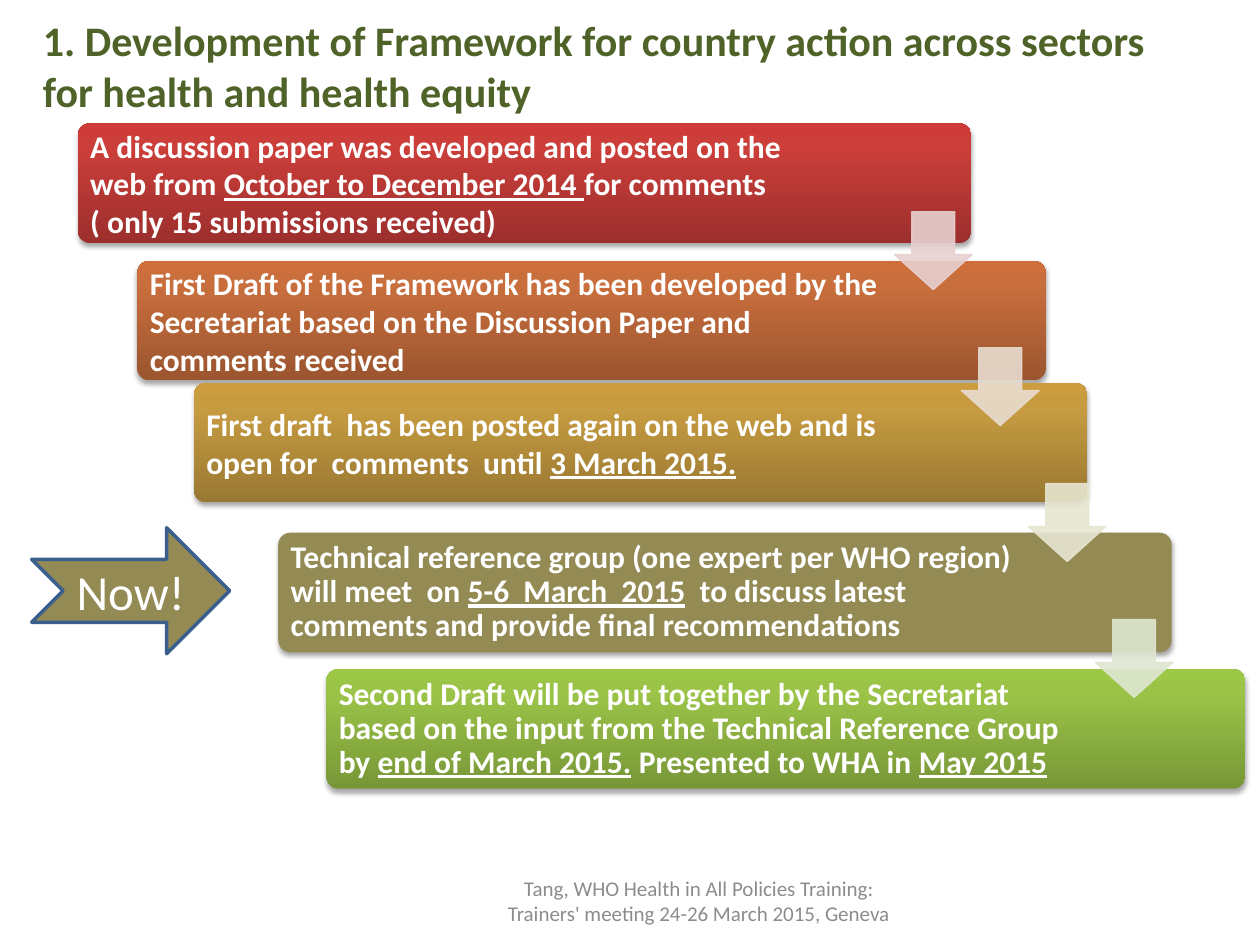
from copy import deepcopy

from lxml.etree import SubElement
from pptx import Presentation
from pptx.dml.color import RGBColor
from pptx.enum.shapes import MSO_SHAPE
from pptx.enum.text import MSO_ANCHOR, MSO_AUTO_SIZE, PP_ALIGN
from pptx.oxml.ns import qn
from pptx.util import Cm, Pt

FONT = "Calibri"
WHITE = RGBColor(0xFF, 0xFF, 0xFF)
GREEN = RGBColor(0x4F, 0x62, 0x28)
GREY = RGBColor(0x8C, 0x8C, 0x8C)
OLIVE = RGBColor(0x94, 0x8A, 0x54)
BLUE = RGBColor(0x3A, 0x5F, 0x8C)
REDS = [RGBColor(0x9C, 0x2F, 0x2D), RGBColor(0xCB, 0x3E, 0x3A), RGBColor(0xCE, 0x3B, 0x37)]
ORANGES = [RGBColor(0x9B, 0x55, 0x2F), RGBColor(0xC9, 0x6E, 0x3D), RGBColor(0xCD, 0x6E, 0x3B)]
GOLDS = [RGBColor(0x99, 0x78, 0x32), RGBColor(0xC7, 0x9C, 0x41), RGBColor(0xCB, 0x9D, 0x3F)]
LIMES = [RGBColor(0x77, 0x97, 0x37), RGBColor(0x9B, 0xC3, 0x48), RGBColor(0x9D, 0xC7, 0x46)]
ARROW_TINTS = [RGBColor(0xE8, 0xD0, 0xD0), RGBColor(0xE8, 0xDC, 0xD0),
               RGBColor(0xE7, 0xE6, 0xD1), RGBColor(0xDE, 0xE7, 0xD1)]
STOPS = [0, 0.8, 1]
STEP_HEIGHT = 2.41

# left, top, width, colours, line spacing, paragraphs (every second piece is underlined)
STEPS = [
    (1.57, 2.49, 18.01, REDS, 1, [
        ["A discussion paper was developed and posted on the web from ",
         "October to December 2014 ", "for comments"],
        ["( only 15 submissions received)"]]),
    (2.77, 5.26, 18.31, ORANGES, 1, [
        ["First Draft of the Framework has been developed by the Secretariat "
         "based on the Discussion Paper and comments received"]]),
    (3.91, 7.72, 18.01, GOLDS, 1, [
        ["First draft  has been posted again on the web and is open for  comments  until ",
         "3 March 2015."]]),
    (5.61, 10.74, 18.01, [OLIVE], 0.9, [
        ["Technical reference group (one expert per WHO region) will meet  on ",
         "5-6  March  2015",
         "  to discuss latest comments and provide final recommendations"]]),
    (6.58, 13.49, 18.52, LIMES, 0.9, [
        ["Second Draft will be put together by the Secretariat based on the input "
         "from the Technical Reference Group by ",
         "end of March 2015.", " Presented to WHA in ", "May 2015"]]),
]


def format_span(span, size, color, bold=False):
    """Give a run its font, size, colour and weight."""
    span.font.name = FONT
    span.font.size = Pt(size)
    span.font.color.rgb = color
    span.font.bold = bold


def format_text(frame, size, color, align, bold=False):
    """Format every run of a text frame alike."""
    frame.vertical_anchor = MSO_ANCHOR.MIDDLE
    for para in frame.paragraphs:
        para.alignment = align
        for span in para.runs:
            format_span(span, size, color, bold)


def fill_step(shape, colors):
    """Fill a step with one colour or a vertical gradient, dark at the bottom."""
    if len(colors) == 1:
        shape.fill.solid()
        shape.fill.fore_color.rgb = colors[0]
        return
    shape.fill.gradient()
    shape.fill.gradient_angle = 90
    stop_list = shape.element.spPr.find(".//" + qn("a:gsLst"))
    stop_list.append(deepcopy(stop_list[-1]))
    for stop, position, color in zip(shape.fill.gradient_stops, STOPS, colors):
        stop.position = position
        stop.color.rgb = color


def add_soft_shadow(shape):
    """Put a soft shadow below a shape."""
    shape.shadow.inherit = False
    effects = shape.element.spPr.find(qn("a:effectLst"))
    shadow = SubElement(effects, qn("a:outerShdw"), blurRad=str(Pt(3.1)),
                        dist=str(Pt(1.8)), dir="5400000", rotWithShape="0")
    color = SubElement(shadow, qn("a:srgbClr"), val="000000")
    SubElement(color, qn("a:alpha"), val="35000")


def add_step(page, left, top, width, colors, spacing, paragraphs):
    """Add one rounded step of the staircase with its text."""
    box = page.shapes.add_shape(MSO_SHAPE.ROUNDED_RECTANGLE, Cm(left), Cm(top),
                                Cm(width), Cm(STEP_HEIGHT))
    box.adjustments[0] = 0.1
    fill_step(box, colors)
    box.line.fill.background()
    add_soft_shadow(box)
    frame = box.text_frame
    frame.word_wrap = True
    frame.margin_left = Cm(0.18)
    frame.margin_right = Cm(3.1)
    frame.margin_top = frame.margin_bottom = Cm(0)
    for number, pieces in enumerate(paragraphs):
        para = frame.add_paragraph() if number else frame.paragraphs[0]
        para.line_spacing = spacing
        for index, piece in enumerate(pieces):
            span = para.add_run()
            span.text = piece
            span.font.underline = index % 2 == 1
    format_text(frame, 18, WHITE, PP_ALIGN.LEFT, bold=True)


def add_down_arrow(page, index, color):
    """Add the translucent arrow that leads from one step to the next."""
    arrow = page.shapes.add_shape(MSO_SHAPE.DOWN_ARROW, Cm(18.03 + 1.35 * index),
                                  Cm(4.27 + 2.74 * index), Cm(1.57), Cm(1.57))
    arrow.adjustments[0] = 0.55
    arrow.adjustments[1] = 0.45
    arrow.shadow.inherit = False
    arrow.fill.solid()
    arrow.fill.fore_color.rgb = color
    arrow.line.color.rgb = color
    arrow.line.width = Pt(0.75)
    for tint in arrow.element.spPr.iter(qn("a:srgbClr")):
        SubElement(tint, qn("a:alpha"), val="90000")


def add_title(page):
    """Move and format the title placeholder."""
    title = page.shapes.title
    title.left, title.top, title.width, title.height = Cm(0.61), Cm(-0.28), Cm(22.86), Cm(3.18)
    title.text_frame.text = ("1. Development of Framework for country action across sectors "
                             "for health and health equity")
    title.text_frame.auto_size = MSO_AUTO_SIZE.NONE
    format_text(title.text_frame, 24, GREEN, PP_ALIGN.LEFT, bold=True)


def add_now_marker(page):
    """Add the notched arrow that marks the current step."""
    marker = page.shapes.add_shape(MSO_SHAPE.NOTCHED_RIGHT_ARROW, Cm(0.64), Cm(10.64),
                                   Cm(3.99), Cm(2.54))
    marker.shadow.inherit = False
    marker.fill.solid()
    marker.fill.fore_color.rgb = OLIVE
    marker.line.color.rgb = BLUE
    marker.line.width = Pt(2)
    marker.text_frame.text = "Now!"
    marker.text_frame.word_wrap = False
    format_text(marker.text_frame, 28, WHITE, PP_ALIGN.CENTER)


def add_credit(page):
    """Add the two centred lines at the foot of the page."""
    box = page.shapes.add_textbox(Cm(8.69), Cm(17.65), Cm(10.8), Cm(1.02))
    box.text_frame.text = ("Tang, WHO Health in All Policies Training:\n"
                           "Trainers' meeting 24-26 March 2015, Geneva")
    box.text_frame.word_wrap = True
    format_text(box.text_frame, 12, GREY, PP_ALIGN.CENTER)


def main():
    """Build and save the slide."""
    deck = Presentation()
    deck.slide_width, deck.slide_height = Cm(25.4), Cm(19.05)
    page = deck.slides.add_slide(deck.slide_layouts[5])
    add_title(page)
    for step in STEPS:
        add_step(page, *step)
    for index, color in enumerate(ARROW_TINTS):
        add_down_arrow(page, index, color)
    add_credit(page)
    add_now_marker(page)
    deck.save("out.pptx")


if __name__ == "__main__":
    main()
